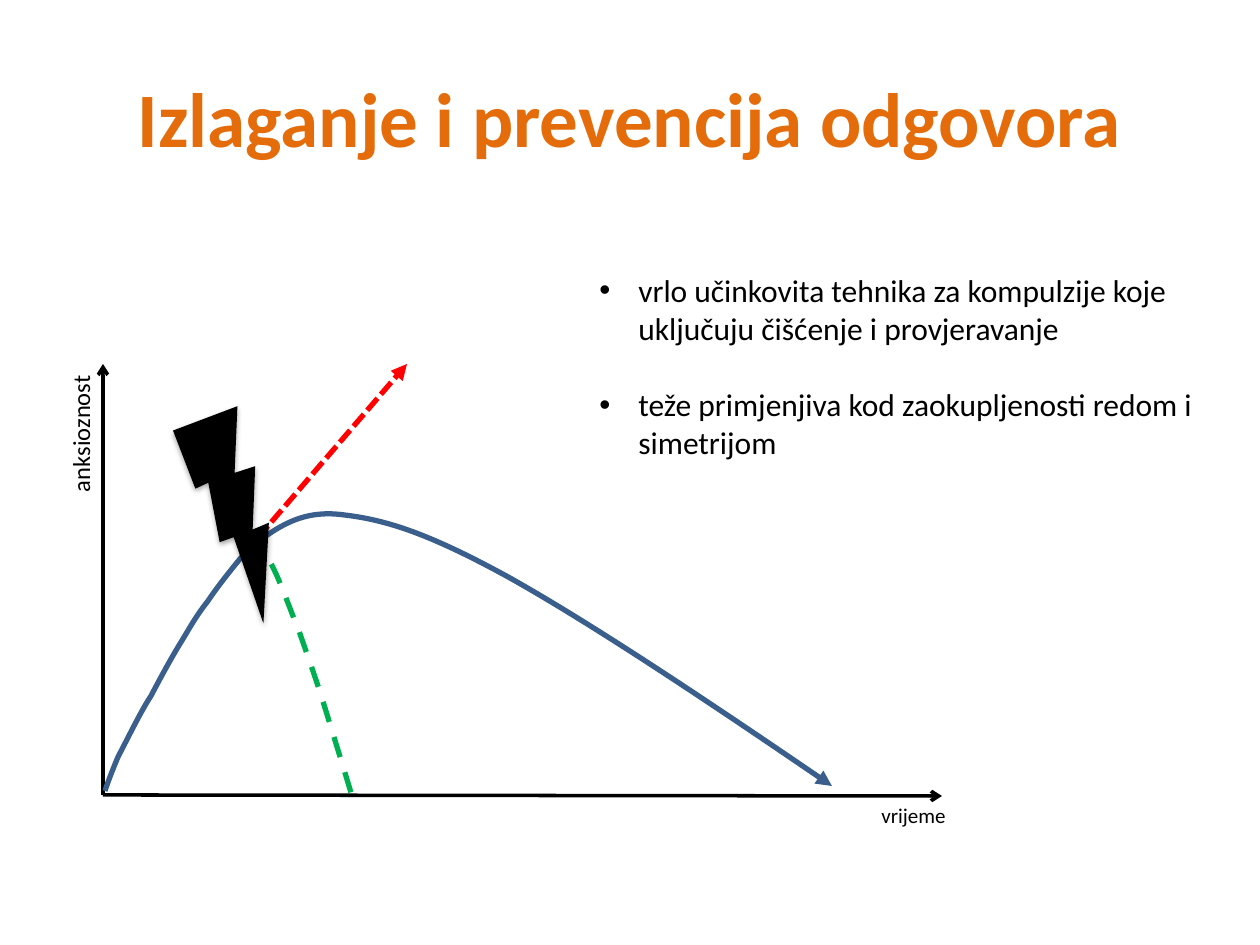
from lxml.etree import SubElement
from pptx import Presentation
from pptx.dml.color import RGBColor
from pptx.enum.dml import MSO_LINE
from pptx.enum.shapes import MSO_CONNECTOR, MSO_SHAPE
from pptx.enum.text import MSO_ANCHOR, MSO_AUTO_SIZE, PP_ALIGN
from pptx.oxml.ns import qn
from pptx.util import Emu, Pt

PX = 914400 // 126
FONT = "Calibri"
COLORS = {
    "title": "E46C0A",
    "ink": "000000",
    "anxiety": "3A5F8C",
    "relief": "00B050",
    "rise": "FF0000",
}

# Start point, then two control points and an end point per curve
ONSET = [(105, 791),
         (108, 782), (111, 774), (118, 757),
         (126, 742), (141, 711), (151, 696),
         (162, 675), (173, 655), (183, 639),
         (192, 624), (197, 615), (208, 601),
         (218, 586), (231, 570), (244, 554)]
RELIEF = [(244, 554),
          (251, 548), (257, 543), (266, 556),
          (276, 568), (290, 610), (299, 631),
          (307, 654), (310, 662), (319, 689),
          (328, 717), (352, 796), (352, 796)]
DECLINE = [(252, 546),
           (277, 528), (301, 509), (344, 515),
           (387, 520), (430, 534), (510, 578),
           (592, 624), (712, 704), (832, 786)]

BULLETS = [
    "vrlo učinkovita tehnika za kompulzije koje uključuju čišćenje i provjeravanje",
    "teže primjenjiva kod zaokupljenosti redom i simetrijom",
]


def px(*lengths):
    return [Emu(length * PX) for length in lengths]


def color(name):
    return RGBColor.from_string(COLORS[name])


def add_text(page, area, lines, size, name="ink", bold=False, align=None,
             anchor=MSO_ANCHOR.TOP, wrap=True, grow=True, turn=0,
             bullet=None, indent=0, gap=0):
    box = page.shapes.add_textbox(*px(*area))
    box.rotation = turn
    frame = box.text_frame
    frame.word_wrap = wrap
    frame.vertical_anchor = anchor
    frame.auto_size = MSO_AUTO_SIZE.SHAPE_TO_FIT_TEXT if grow else MSO_AUTO_SIZE.NONE
    for index, line in enumerate(lines):
        para = frame.add_paragraph() if index else frame.paragraphs[0]
        para.alignment = align
        if index:
            para.space_before = Pt(gap)
        span = para.add_run()
        span.text = line
        font = span.font
        font.name, font.size, font.bold = FONT, Pt(size), bold
        font.color.rgb = color(name)
        if bullet:
            props = para._p.get_or_add_pPr()
            props.set("marL", str(indent * PX))
            props.set("indent", str(-indent * PX))
            SubElement(props, qn("a:buFont"), typeface="Arial")
            SubElement(props, qn("a:buChar"), char=bullet)
    return box


def style_line(shape, name, width, dash=None, arrow=None):
    line = shape.line
    line.color.rgb = color(name)
    line.width = Pt(width)
    if dash:
        line.dash_style = dash
    if arrow:
        SubElement(line._get_or_add_ln(), qn("a:tailEnd"), type=arrow)


def add_line(page, start, end, name, width, **style):
    line = page.shapes.add_connector(MSO_CONNECTOR.STRAIGHT, *px(*start, *end))
    style_line(line, name, width, **style)
    SubElement(line._element.spPr, qn("a:effectLst"))
    return line


def add_curve(page, points, name, **style):
    builder = page.shapes.build_freeform(*points[0], scale=PX)
    builder.add_line_segments(points[1:], close=False)
    curve = builder.convert_to_shape()
    curve.fill.background()
    curve.shadow.inherit = False
    style_line(curve, name, 3, **style)
    # Every three straight steps become one cubic curve
    outline = next(curve._element.iter(qn("a:path")))
    steps = outline.findall(qn("a:lnTo"))
    for first in range(0, len(steps), 3):
        cubic = SubElement(outline, qn("a:cubicBezTo"))
        for step in steps[first:first + 3]:
            cubic.append(step[0])
            outline.remove(step)
    return curve


def add_bolt(page, area, turn):
    bolt = page.shapes.add_shape(MSO_SHAPE.LIGHTNING_BOLT, *px(*area))
    bolt.rotation = turn
    bolt.fill.solid()
    bolt.fill.fore_color.rgb = color("ink")
    bolt.line.fill.background()
    bolt.shadow.inherit = False
    props = bolt._element.spPr
    props.find(qn("a:xfrm")).set("flipH", "1")
    # Soft shadow straight below
    shadow = SubElement(props.find(qn("a:effectLst")), qn("a:outerShdw"),
                        blurRad=str(Pt(3.1)), dist=str(Pt(1.8)),
                        dir="5400000", rotWithShape="0")
    tone = SubElement(shadow, qn("a:srgbClr"), val=COLORS["ink"])
    SubElement(tone, qn("a:alpha"), val="35000")
    return bolt


def main():
    deck = Presentation()
    deck.slide_width, deck.slide_height = px(1260, 945)
    page = deck.slides.add_slide(deck.slide_layouts[6])

    # Title
    add_text(page, (63, 38, 1134, 158), ["Izlaganje i prevencija odgovora"], 44,
             name="title", bold=True, align=PP_ALIGN.CENTER,
             anchor=MSO_ANCHOR.MIDDLE, grow=False)

    # Axes and their labels
    origin = (103, 795)
    for end in ((103, 364), (942, 796)):
        add_line(page, origin, end, "ink", 2, arrow="arrow")
    add_text(page, (9, 411, 144, 43), ["anksioznost"], 14, wrap=False, turn=270)
    add_text(page, (869, 796, 91, 38), ["vrijeme"], 12, wrap=False)

    # Anxiety over time
    add_curve(page, ONSET, "anxiety")
    add_curve(page, RELIEF, "relief", dash=MSO_LINE.DASH)
    add_line(page, ONSET[-1], (407, 364), "rise", 3,
             dash=MSO_LINE.SQUARE_DOT, arrow="triangle")
    add_curve(page, DECLINE, "anxiety", arrow="triangle")
    add_bolt(page, (161, 408, 152, 192), 309.2)

    # Remarks
    add_text(page, (587, 265, 629, 204), BULLETS, 18,
             bullet="•", indent=39, gap=22)

    deck.save("out.pptx")


if __name__ == "__main__":
    main()
